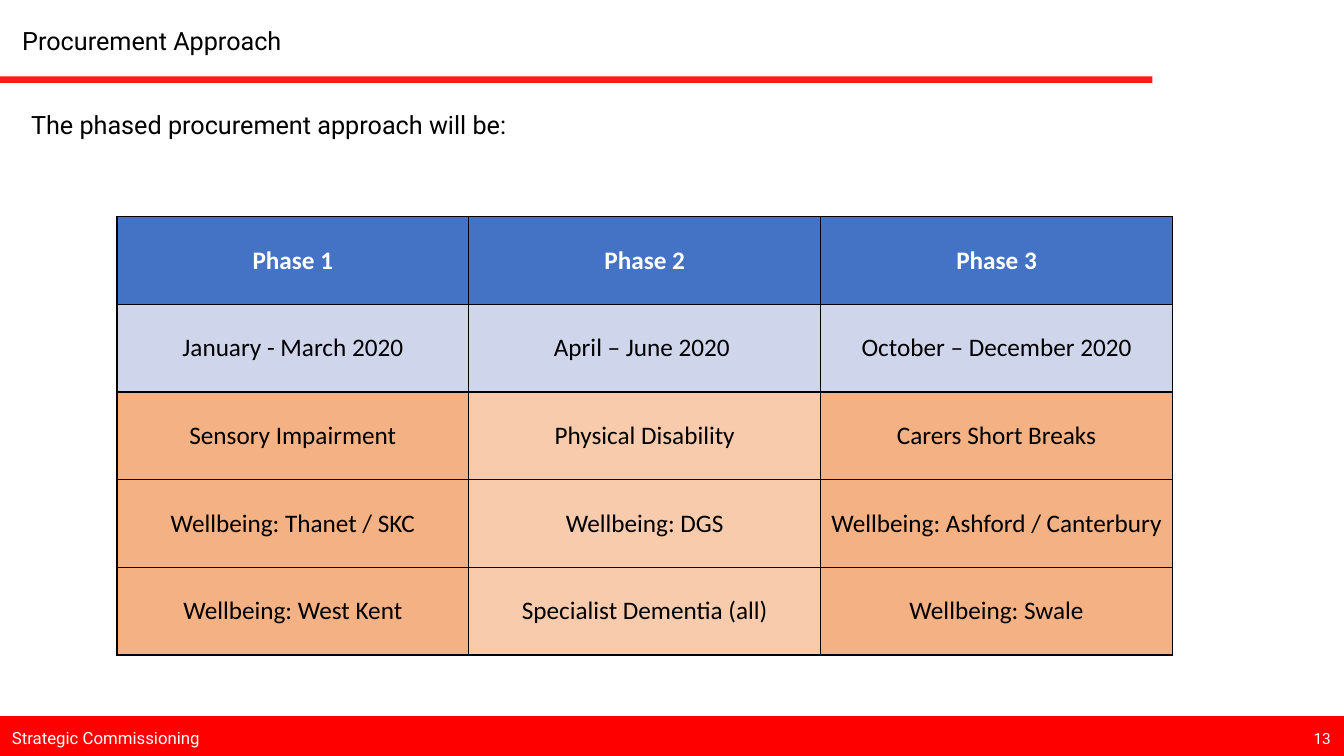
from lxml import etree
from pptx import Presentation
from pptx.dml.color import RGBColor
from pptx.enum.shapes import MSO_CONNECTOR, MSO_SHAPE
from pptx.enum.text import MSO_ANCHOR, MSO_AUTO_SIZE, PP_ALIGN
from pptx.oxml.ns import qn
from pptx.util import Inches, Pt

BLACK = RGBColor(0x00, 0x00, 0x00)
WHITE = RGBColor(0xFF, 0xFF, 0xFF)
RED = RGBColor(0xFF, 0x00, 0x00)
BLUE = RGBColor(0x44, 0x72, 0xC4)
PALE_BLUE = RGBColor(0xCF, 0xD5, 0xEA)
ORANGE = RGBColor(0xF4, 0xB1, 0x83)
PALE_ORANGE = RGBColor(0xF8, 0xCB, 0xAD)

STRAIGHT = MSO_CONNECTOR.STRAIGHT
RECTANGLE = MSO_SHAPE.RECTANGLE
TOP, MIDDLE = MSO_ANCHOR.TOP, MSO_ANCHOR.MIDDLE
NO_FIT = MSO_AUTO_SIZE.NONE
LEFT, CENTER = PP_ALIGN.LEFT, PP_ALIGN.CENTER

PHASES = [
    ["Phase 1", "Phase 2", "Phase 3"],
    ["January - March 2020", "April – June 2020 ", "October – December 2020"],
    ["Sensory Impairment", "Physical Disability", "Carers Short Breaks"],
    ["Wellbeing: Thanet / SKC", "Wellbeing: DGS", "Wellbeing: Ashford / Canterbury"],
    ["Wellbeing: West Kent", "Specialist Dementia (all)", "Wellbeing: Swale"],
]
HEADER_FILLS = [BLUE] * 3
DATE_FILLS = [PALE_BLUE] * 3
SERVICE_FILLS = [ORANGE, PALE_ORANGE, ORANGE]
ROW_FILLS = [HEADER_FILLS, DATE_FILLS] + [SERVICE_FILLS] * 3


class SlideBuilder:
    text_font = "Roboto"
    table_font = "Calibri"

    def __init__(self, page):
        self.page = page

    def add_words(self, frame, text, color, size, font, align=LEFT, bold=False, **spacing):
        para = frame.paragraphs[0]
        span = para.add_run()
        span.text = text
        for name, value in {"alignment": align, **spacing}.items():
            setattr(para, name, value)
        for name, value in {"name": font, "size": Pt(size), "bold": bold}.items():
            setattr(span.font, name, value)
        span.font.color.rgb = color

    def fill_box(self, box, text, color, size, anchor, **spacing):
        frame = box.text_frame
        settings = {"word_wrap": True, "auto_size": NO_FIT, "vertical_anchor": anchor}
        for name, value in settings.items():
            setattr(frame, name, value)
        self.add_words(frame, text, color, size, self.text_font, **spacing)

    def title(self, text, left, top, width, height):
        box = self.page.shapes.title
        place = {"left": left, "top": top, "width": width, "height": height}
        for name, value in place.items():
            setattr(box, name, Inches(value))
        self.fill_box(box, text, BLACK, 18, TOP)

    def text(self, text, left, top, width, height, color, size, anchor=TOP, **spacing):
        box = self.page.shapes.add_textbox(*map(Inches, (left, top, width, height)))
        self.fill_box(box, text, color, size, anchor, **spacing)

    def bar(self, left, top, width, height, color):
        bar = self.page.shapes.add_shape(RECTANGLE, *map(Inches, (left, top, width, height)))
        bar.shadow.inherit = False
        bar.fill.solid()
        bar.fill.fore_color.rgb = color
        bar.line.color.rgb = color
        bar.line.width = Pt(1)

    def rule(self, left, top, right, color, width, opacity):
        rule = self.page.shapes.add_connector(STRAIGHT, *map(Inches, (left, top, right, top)))
        rule.line.color.rgb = color
        rule.line.width = Pt(width)
        properties = rule._element.spPr
        tint = properties.find(".//" + qn("a:srgbClr"))
        etree.SubElement(tint, qn("a:alpha"), val=str(opacity * 1000))
        etree.SubElement(properties, qn("a:effectLst"))

    def border(self, cell, color, width):
        properties = cell._tc.get_or_add_tcPr()
        for side in ("a:lnL", "a:lnR", "a:lnT", "a:lnB"):
            line = etree.SubElement(properties, qn(side), w=str(Pt(width)))
            fill = etree.SubElement(line, qn("a:solidFill"))
            etree.SubElement(fill, qn("a:srgbClr"), val=str(color))

    def table(self, rows, fills, left, top, column_width, row_height):
        width, height = column_width * len(rows[0]), row_height * len(rows)
        frame = self.page.shapes.add_table(
            len(rows), len(rows[0]), *map(Inches, (left, top, width, height)))
        grid = frame.table
        for column in grid.columns:
            column.width = Inches(column_width)
        for row_index, (row, row_fills) in enumerate(zip(rows, fills)):
            grid.rows[row_index].height = Inches(row_height)
            header = row_index == 0
            for column_index, (text, fill) in enumerate(zip(row, row_fills)):
                cell = grid.cell(row_index, column_index)
                self.border(cell, BLACK, 1)
                cell.fill.solid()
                cell.fill.fore_color.rgb = fill
                cell.vertical_anchor = MIDDLE
                self.add_words(cell.text_frame, text, WHITE if header else BLACK, 18,
                               self.table_font, CENTER, header)


def main():
    deck = Presentation()
    deck.slide_width, deck.slide_height = Inches(13.33), Inches(7.5)
    builder = SlideBuilder(deck.slides.add_slide(deck.slide_layouts[5]))
    builder.bar(0, 7.11, 13.33, 0.4, RED)
    builder.rule(0, 0.79, 11.43, RED, 4.5, 90)
    builder.text("Strategic Commissioning", 0.02, 7.12, 2.33, 0.4, WHITE, 12, MIDDLE)
    builder.text("The phased procurement approach will be:", 0.21, 0.99, 11.22, 0.42,
                 BLACK, 18, line_spacing=1.15, space_after=Pt(10))
    builder.title("Procurement Approach", 0.12, 0.2, 7.44, 0.4)
    builder.text("13", 12.93, 7.18, 0.41, 0.29, WHITE, 11)
    builder.table(PHASES, ROW_FILLS, 1.16, 2.15, 3.49, 0.87)
    deck.save("out.pptx")


if __name__ == "__main__":
    main()
